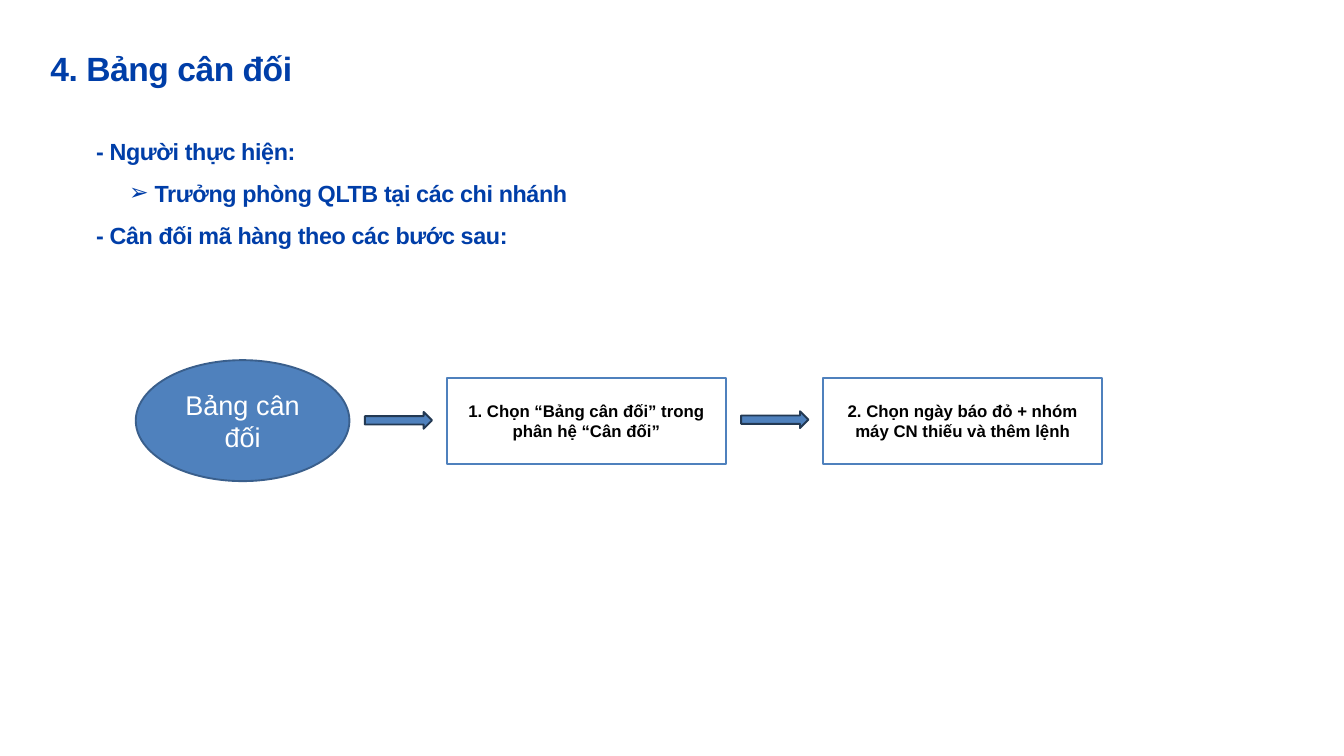
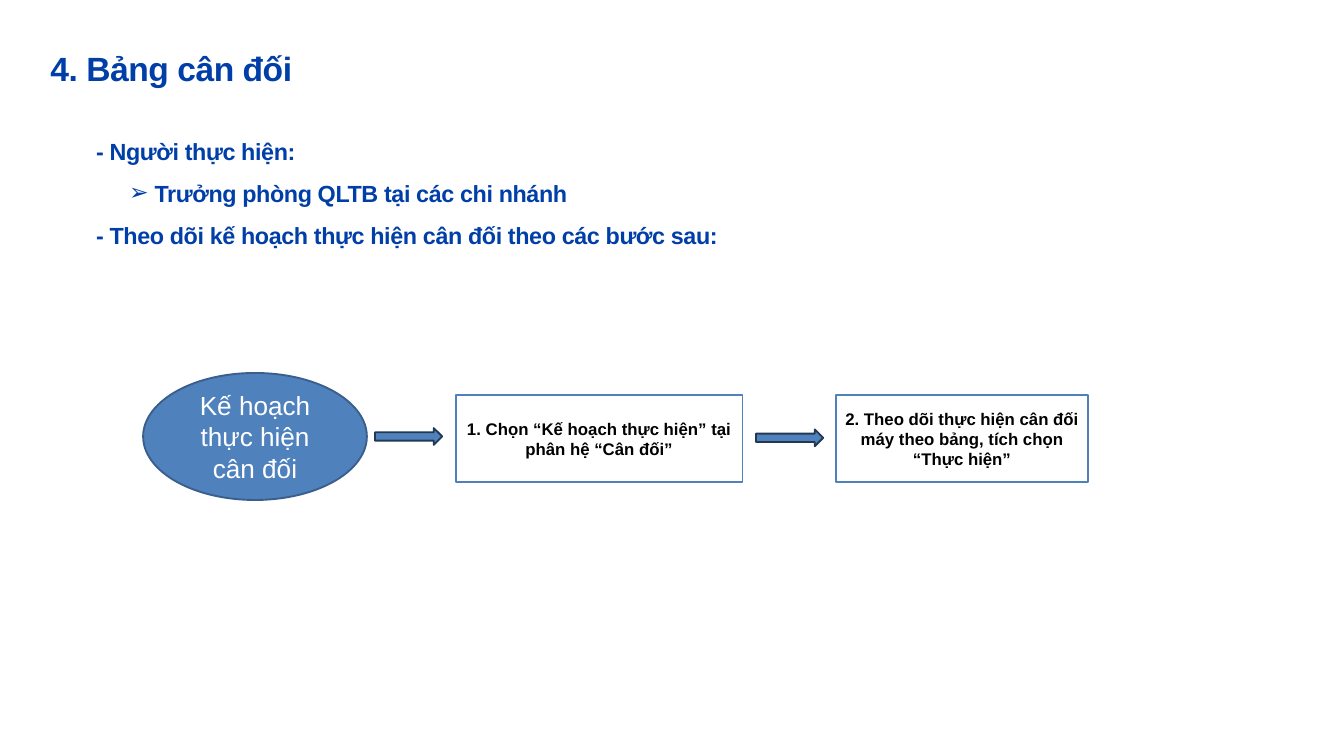
from lxml import etree
from pptx import Presentation
from pptx.dml.color import RGBColor
from pptx.enum.shapes import MSO_SHAPE
from pptx.enum.text import MSO_ANCHOR, MSO_AUTO_SIZE, PP_ALIGN
from pptx.oxml.ns import qn
from pptx.util import Pt

RECT, OVAL, ARROW = MSO_SHAPE.RECTANGLE, MSO_SHAPE.OVAL, MSO_SHAPE.RIGHT_ARROW
LEFT, CENTER = PP_ALIGN.LEFT, PP_ALIGN.CENTER
TOP, MIDDLE = MSO_ANCHOR.TOP, MSO_ANCHOR.MIDDLE
GROW = MSO_AUTO_SIZE.SHAPE_TO_FIT_TEXT

PX = 9144
FONT = "Arial"
NAVY = RGBColor(0x00, 0x3E, 0xA8)
BLUE = RGBColor(0x4F, 0x81, 0xBD)
OVAL_EDGE = RGBColor(0x3A, 0x5F, 0x8C)
ARROW_EDGE = RGBColor(0x23, 0x39, 0x53)
WHITE = RGBColor(0xFF, 0xFF, 0xFF)
BLACK = RGBColor(0x00, 0x00, 0x00)

TITLE = "4. Bảng cân đối"
ROLE = "- Người thực hiện:"
PERSON = "Trưởng phòng QLTB tại các chi nhánh"

SLIDES = [
    {
        "task": "- Cân đối mã hàng theo các bước sau:",
        "body_width": 749,
        "oval_size": 29,
        "oval": ("Bảng cân đối", (202, 536, 318, 180)),
        "steps": [
            ("1. Chọn “Bảng cân đối” trong phân hệ “Cân đối”", (665, 562, 415, 129)),
            ("2. Chọn ngày báo đỏ + nhóm máy CN thiếu và thêm lệnh", (1225, 562, 415, 129)),
        ],
        "arrows": [(543, 613), (1103, 612)],
    },
    {
        "task": "- Theo dõi kế hoạch thực hiện cân đối theo các bước sau:",
        "body_width": 982,
        "oval_size": 28,
        "oval": ("Kế hoạch thực hiện cân đối", (213, 555, 333, 189)),
        "steps": [
            ("1. Chọn “Kế hoạch thực hiện” tại phân hệ “Cân đối”", (678, 588, 427, 129)),
            ("2. Theo dõi thực hiện cân đối máy theo bảng, tích chọn “Thực hiện”",
             (1244, 588, 375, 129)),
        ],
        "arrows": [(558, 637), (1125, 639)],
    },
]


def write(p, text, size=25, color=NAVY, bold=True, align=LEFT, line=None,
          tracking=None, bullet=None, margin=0, indent=0):
    p.alignment = align
    p.space_before = p.space_after = Pt(0)
    if line:
        p.line_spacing = line
    pPr = p._p.get_or_add_pPr()
    pPr.set("marL", str(margin * PX))
    pPr.set("indent", str(indent * PX))
    if bullet:
        etree.SubElement(pPr, qn("a:buFont")).set("typeface", FONT)
        etree.SubElement(pPr, qn("a:buChar")).set("char", bullet)
    else:
        etree.SubElement(pPr, qn("a:buNone"))
    r = p.add_run()
    r.text = text
    r.font.name, r.font.size, r.font.bold = FONT, Pt(size), bold
    r.font.color.rgb = color
    if tracking:
        r._r.get_or_add_rPr().set("spc", str(tracking))


def add_box(s, kind, box, fill, edge):
    sp = s.shapes.add_shape(kind, *[v * PX for v in box])
    sp.shadow.inherit = False
    sp.fill.solid()
    sp.fill.fore_color.rgb = fill
    sp.line.color.rgb = edge
    sp.line.width = Pt(2)
    sp.text_frame.word_wrap = True
    sp.text_frame.vertical_anchor = MIDDLE
    return sp


prs = Presentation()
prs.slide_width, prs.slide_height = 2000 * PX, 1125 * PX

for data in SLIDES:
    s = prs.slides.add_slide(prs.slide_layouts[1])
    title, body = s.shapes.title, s.placeholders[1]
    places = [(title, (75, 71, 817, 58)), (body, (143, 183, data["body_width"], 245))]
    for sp, box in places:
        sp.left, sp.top, sp.width, sp.height = [v * PX for v in box]
        tf = sp.text_frame
        tf.margin_left = tf.margin_right = tf.margin_top = tf.margin_bottom = 0
        tf.vertical_anchor = TOP
        tf.word_wrap = True
        tf.auto_size = GROW

    write(title.text_frame.paragraphs[0], TITLE, size=36, line=Pt(43.5), tracking=-50)
    tf = body.text_frame
    write(tf.paragraphs[0], ROLE, line=1.5, tracking=-40)
    p = tf.add_paragraph()
    p.level = 1
    write(p, PERSON, line=1.5, tracking=-40, bullet="➢", margin=87, indent=-38)
    write(tf.add_paragraph(), data["task"], line=1.5, tracking=-40)

    text, box = data["oval"]
    sp = add_box(s, OVAL, box, BLUE, OVAL_EDGE)
    write(sp.text_frame.paragraphs[0], text, size=data["oval_size"], color=WHITE,
          bold=False, align=CENTER)
    for text, box in data["steps"]:
        sp = add_box(s, RECT, box, WHITE, BLUE)
        write(sp.text_frame.paragraphs[0], text, size=18, color=BLACK, align=CENTER)
    for x, y in data["arrows"]:
        add_box(s, ARROW, (x, y, 100, 25), BLUE, ARROW_EDGE)

prs.save("out.pptx")
